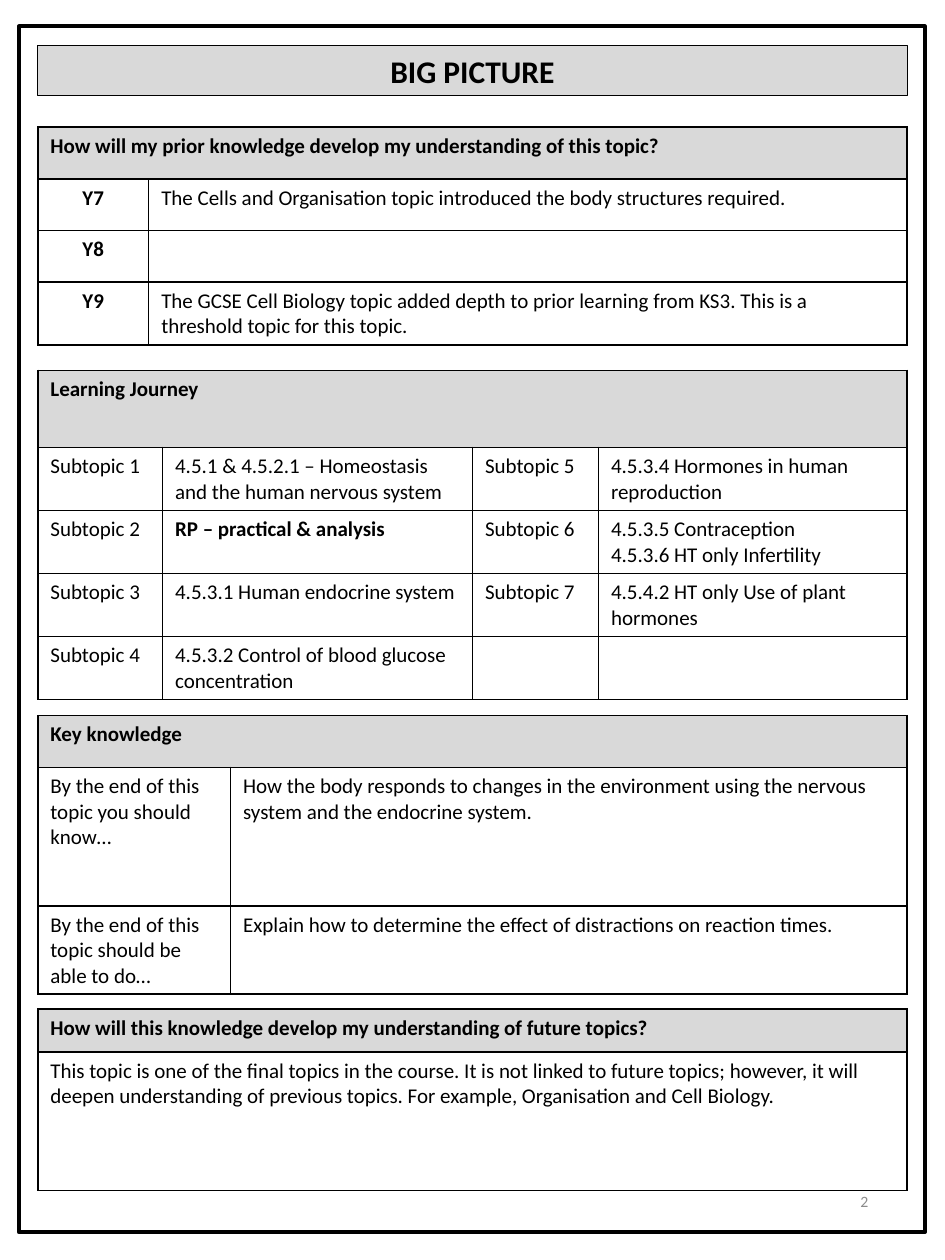
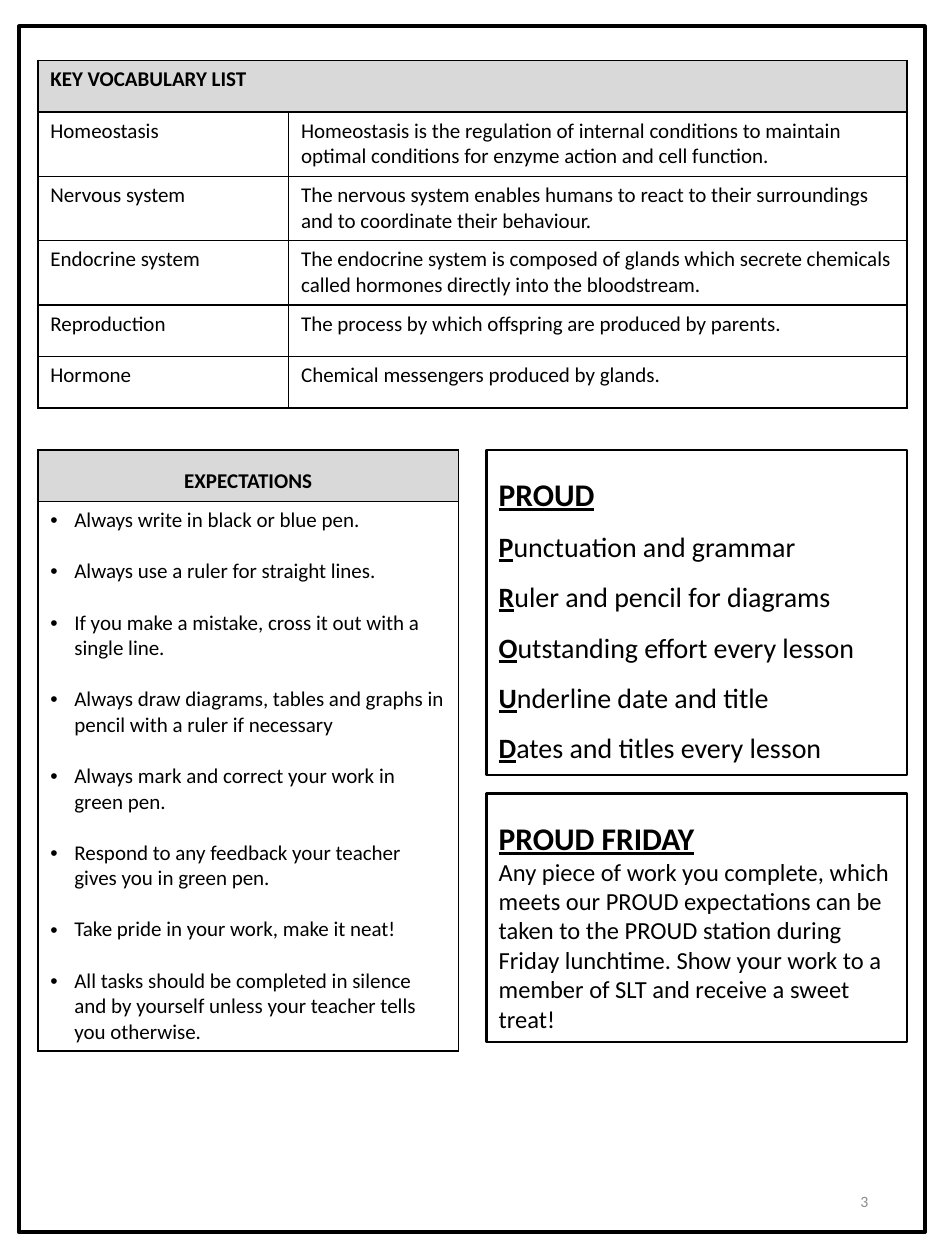
import pptx
import pptx.util
import pptx.dml.color
import pptx.enum.shapes
import pptx.enum.text
import pptx.oxml
import pptx.oxml.ns

PX = 9144
BLACK, GREY, NUMBER_GREY = "000000", "D9D9D9", "8C8C8C"
LEFT, FULL_WIDTH = 30, 690
HALF_WIDTH, RIGHT_COLUMN = 334, 386
TOP_ROW = 357
colour = pptx.dml.color.RGBColor.from_string
RECTANGLE = pptx.enum.shapes.MSO_SHAPE.RECTANGLE
ALIGN = pptx.enum.text.PP_ALIGN
ANCHOR = pptx.enum.text.MSO_ANCHOR


def add_run(para, text, size=12, bold=False, underline=False, ink=BLACK):
    span = para.add_run()
    span.text = text
    span.font.name = "Calibri"
    span.font.size = pptx.util.Pt(size)
    span.font.bold = bold
    span.font.underline = underline
    span.font.color.rgb = colour(ink)


def add_grid(page, left, top, widths, heights, heading, body, bold_texts=()):
    frame = page.shapes.add_table(
        len(heights), len(widths), left * PX, top * PX, sum(widths) * PX, sum(heights) * PX
    )
    grid = frame.table
    grid.first_row = grid.horz_banding = False
    for column, width in zip(grid.columns, widths):
        column.width = width * PX
    for row, height in zip(grid.rows, heights):
        row.height = height * PX
    for cell in grid.iter_cells():
        properties = cell._tc.get_or_add_tcPr()
        for side in ("lnL", "lnR", "lnT", "lnB"):
            properties.append(pptx.oxml.parse_xml(
                f'<a:{side} {pptx.oxml.ns.nsdecls("a")} w="12700"><a:solidFill>'
                f'<a:srgbClr val="{BLACK}"/></a:solidFill></a:{side}>'
            ))
        cell.fill.background()
    for cell in grid.rows[0].cells:
        cell.fill.solid()
        cell.fill.fore_color.rgb = colour(GREY)
    if len(widths) > 1:
        grid.cell(0, 0).merge(grid.cell(0, len(widths) - 1))
    add_run(grid.cell(0, 0).text_frame.paragraphs[0], heading, bold=True)
    for row_number, texts in enumerate(body, 1):
        for column_number, text in enumerate(texts):
            words = grid.cell(row_number, column_number).text_frame
            for line_number, line in enumerate(text.split("\n") if text else []):
                para = words.add_paragraph() if line_number else words.paragraphs[0]
                add_run(para, line, bold=line in bold_texts)
    return grid


deck = pptx.Presentation()
deck.slide_width = 750 * PX
deck.slide_height = 1000 * PX
overview = deck.slides.add_slide(deck.slide_layouts[5])
reference = deck.slides.add_slide(deck.slide_layouts[6])

for number, page in enumerate((overview, reference), 2):
    border = page.shapes.add_shape(RECTANGLE, 15 * PX, 21 * PX, 719 * PX, 957 * PX)
    border.shadow.inherit = False
    border.fill.background()
    border.line.color.rgb = colour(BLACK)
    border.line.width = pptx.util.Pt(2.25)
    box = page.shapes.add_textbox(530 * PX, 927 * PX, 169 * PX, 53 * PX)
    box.text_frame.word_wrap = True
    box.text_frame.vertical_anchor = ANCHOR.MIDDLE
    para = box.text_frame.paragraphs[0]
    para.alignment = ALIGN.RIGHT
    add_run(para, str(number), size=9, ink=NUMBER_GREY)

title = overview.shapes.title
title.left, title.top = LEFT * PX, 36 * PX
title.width, title.height = FULL_WIDTH * PX, 40 * PX
title.fill.solid()
title.fill.fore_color.rgb = colour(GREY)
title.line.color.rgb = colour(BLACK)
title.line.width = pptx.util.Pt(0.75)
title.text_frame.auto_size = pptx.enum.text.MSO_AUTO_SIZE.NONE
title.text_frame.vertical_anchor = ANCHOR.MIDDLE
title.text_frame.paragraphs[0].alignment = ALIGN.CENTER
add_run(title.text_frame.paragraphs[0], "BIG PICTURE", size=18, bold=True)

years = ("Y7", "Y8", "Y9")
prior = add_grid(
    overview, LEFT, 101, [88, 602], [41, 41, 41, 50],
    "How will my prior knowledge develop my understanding of this topic?",
    zip(years, (
        "The Cells and Organisation topic introduced the body structures required.",
        "",
        "The GCSE Cell Biology topic added depth to prior learning from KS3. "
        "This is a threshold topic for this topic.",
    )),
    bold_texts=years,
)
for row_number in range(1, 4):
    prior.cell(row_number, 0).text_frame.paragraphs[0].alignment = ALIGN.CENTER

practical = "RP – practical & analysis"
add_grid(
    overview, LEFT, 294, [99, 246, 100, 245], [61] + [50] * 4, "Learning Journey",
    [
        ("Subtopic 1", "4.5.1 & 4.5.2.1 – Homeostasis and the human nervous system",
         "Subtopic 5", "4.5.3.4 Hormones in human reproduction"),
        ("Subtopic 2", practical,
         "Subtopic 6", "4.5.3.5 Contraception\n4.5.3.6 HT only Infertility"),
        ("Subtopic 3", "4.5.3.1 Human endocrine system",
         "Subtopic 7", "4.5.4.2 HT only Use of plant hormones"),
        ("Subtopic 4", "4.5.3.2 Control of blood glucose concentration", "", ""),
    ],
    bold_texts=(practical,),
)

add_grid(
    overview, LEFT, 568, [153, 537], [41, 110, 70], "Key knowledge",
    [
        ("By the end of this topic you should know…",
         "How the body responds to changes in the environment using the nervous system "
         "and the endocrine system."),
        ("By the end of this topic should be able to do…",
         "Explain how to determine the effect of distractions on reaction times."),
    ],
)

add_grid(
    overview, LEFT, 801, [FULL_WIDTH], [34, 110],
    "How will this knowledge develop my understanding of future topics?",
    [("This topic is one of the final topics in the course. It is not linked to future topics; "
      "however, it will deepen understanding of previous topics. For example, Organisation "
      "and Cell Biology.",)],
)

add_grid(
    reference, LEFT, 48, [199, 491], [41, 51, 51, 51, 41, 41], "KEY VOCABULARY LIST",
    [
        ("Homeostasis", "Homeostasis is the regulation of internal conditions to maintain "
         "optimal conditions for enzyme action and cell function."),
        ("Nervous system", "The nervous system enables humans to react to their surroundings "
         "and to coordinate their behaviour."),
        ("Endocrine system", "The endocrine system is composed of glands which secrete "
         "chemicals called hormones directly into the bloodstream."),
        ("Reproduction", "The process by which offspring are produced by parents."),
        ("Hormone", "Chemical messengers produced by glands."),
    ],
)

rules = (
    "Always write in black or blue pen.",
    "Always use a ruler for straight lines.",
    "If you make a mistake, cross it out with a single line.",
    "Always draw diagrams, tables and graphs in pencil with a ruler if necessary",
    "Always mark and correct your work in green pen.",
    "Respond to any feedback your teacher gives you in green pen.",
    "Take pride in your work, make it neat!",
    "All tasks should be completed in silence and by yourself unless your teacher "
    "tells you otherwise.",
)
expectations = add_grid(
    reference, LEFT, TOP_ROW, [HALF_WIDTH], [41, 436], "EXPECTATIONS", [("\n".join(rules),)]
)
heading = expectations.cell(0, 0).text_frame.paragraphs[0]
heading.alignment = ALIGN.CENTER
heading.line_spacing = 1.5
for rule_number, para in enumerate(expectations.cell(1, 0).text_frame.paragraphs):
    if rule_number:
        para.space_before = pptx.util.Pt(14.6)
    properties = para._p.get_or_add_pPr()
    properties.set("marL", str(19 * PX))
    properties.set("indent", str(-19 * PX))
    for bullet in ('<a:buFont {} typeface="Arial"/>', '<a:buChar {} char="•"/>'):
        properties.append(pptx.oxml.parse_xml(bullet.format(pptx.oxml.ns.nsdecls("a"))))

panels = []
for top, height, name in ((TOP_ROW, 258, "PROUD"), (630, 197, "PROUD FRIDAY")):
    panel = reference.shapes.add_shape(
        RECTANGLE, RIGHT_COLUMN * PX, top * PX, HALF_WIDTH * PX, height * PX
    )
    panel.shadow.inherit = False
    panel.fill.background()
    panel.line.color.rgb = colour(BLACK)
    panel.line.width = pptx.util.Pt(1.5)
    panel.text_frame.word_wrap = True
    panel.text_frame.vertical_anchor = ANCHOR.TOP
    para = panel.text_frame.paragraphs[0]
    para.alignment = ALIGN.LEFT
    para.line_spacing = 1.5
    add_run(para, name, size=18, bold=True, underline=True)
    panels.append(panel.text_frame)
proud, friday = panels

for promise in (
    "Punctuation and grammar",
    "Ruler and pencil for diagrams",
    "Outstanding effort every lesson",
    "Underline date and title",
    "Dates and titles every lesson",
):
    para = proud.add_paragraph()
    para.alignment = ALIGN.LEFT
    para.line_spacing = 1.5
    add_run(para, promise[0], size=16, bold=True, underline=True)
    add_run(para, promise[1:], size=16)

para = friday.add_paragraph()
para.alignment = ALIGN.LEFT
add_run(
    para,
    "Any piece of work you complete, which meets our PROUD expectations can be taken to the "
    "PROUD station during Friday lunchtime. Show your work to a member of SLT and receive "
    "a sweet treat!",
    size=14,
)

deck.save("out.pptx")
